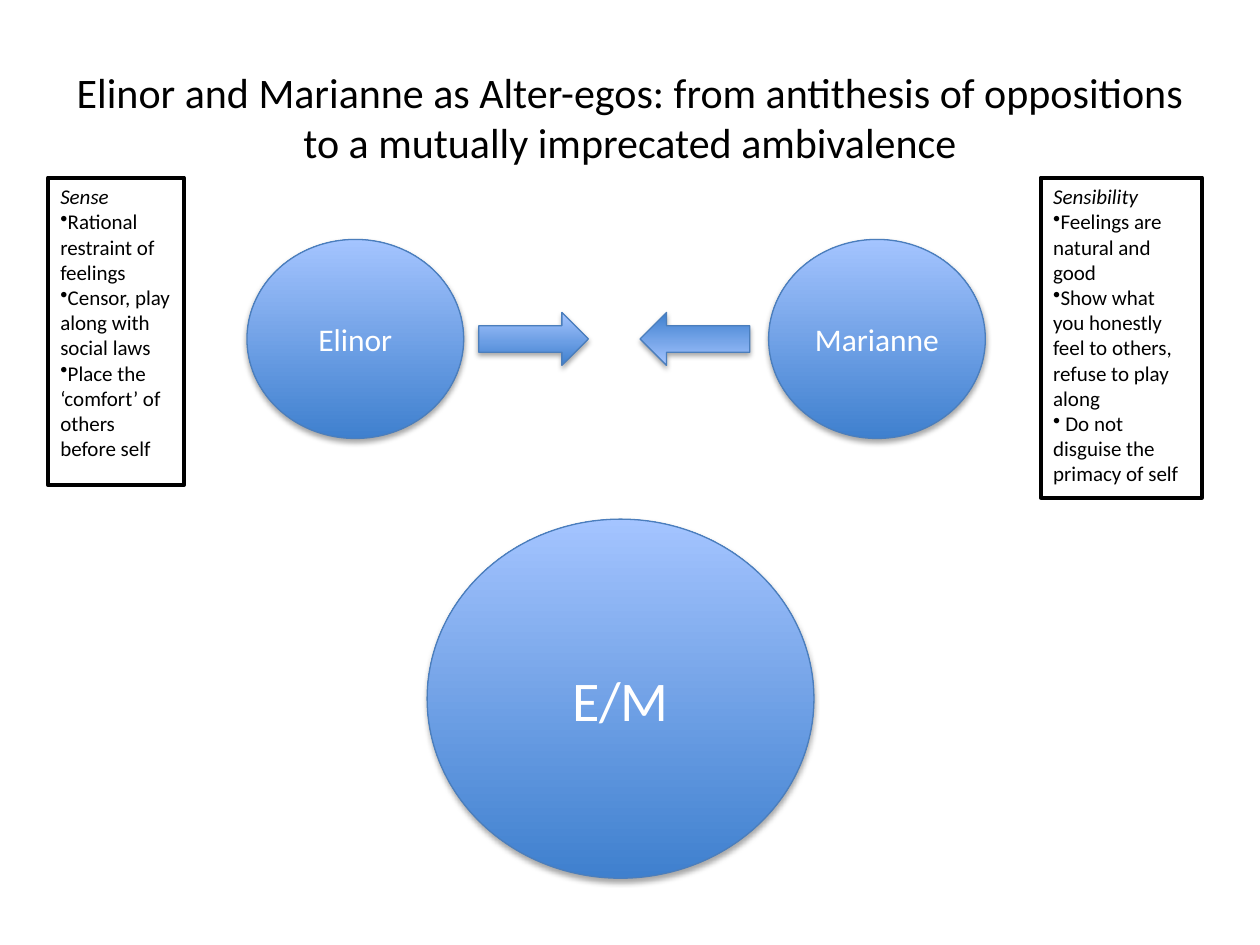
import pptx
import pptx.util
import pptx.dml.color
import pptx.enum.shapes
import pptx.enum.text
import pptx.oxml.ns
import lxml.etree

Inches = pptx.util.Inches
Pt = pptx.util.Pt
qn = pptx.oxml.ns.qn
Kind = pptx.enum.shapes.MSO_SHAPE
Align = pptx.enum.text.PP_ALIGN
Anchor = pptx.enum.text.MSO_ANCHOR
COLORS = {"ink": "000000", "white": "FFFFFF", "deep": "3F80CE",
          "pale": "A4C4FF", "edge": "4B7EBC"}


def color(name):
    return pptx.dml.color.RGBColor.from_string(COLORS[name])


def style(par, size, name, align=Align.CENTER):
    par.alignment = align
    par.font.name = "Calibri"
    par.font.size = Pt(size)
    par.font.color.rgb = color(name)


deck = pptx.Presentation()
deck.slide_width, deck.slide_height = Inches(10), Inches(7.5)
slide = deck.slides.add_slide(deck.slide_layouts[6])

# Title
title = slide.shapes.add_textbox(Inches(0.5), Inches(0.3), Inches(9), Inches(1.25))
frame = title.text_frame
frame.word_wrap = True
frame.vertical_anchor = Anchor.MIDDLE
frame.text = ("Elinor and Marianne as Alter-egos: from antithesis of oppositions "
              "to a mutually imprecated ambivalence")
style(frame.paragraphs[0], 24, "ink")

# Circles and the arrows that bring them together
figures = [
    (Kind.OVAL, 1.96, 1.9, 1.72, 1.58, 0, "Elinor", 18),
    (Kind.OVAL, 6.1, 1.9, 1.72, 1.58, 0, "Marianne", 18),
    (Kind.RIGHT_ARROW, 3.8, 2.48, 0.87, 0.42, 0, "", 18),
    (Kind.RIGHT_ARROW, 5.08, 2.48, 0.87, 0.42, 180, "", 18),
    (Kind.OVAL, 3.39, 4.12, 3.07, 2.85, 0, "E/M", 32),
]
for kind, x, y, w, h, turn, label, size in figures:
    shape = slide.shapes.add_shape(kind, Inches(x), Inches(y), Inches(w), Inches(h))
    shape.rotation = turn
    shape.fill.gradient()
    shape.fill.gradient_angle = 90
    for stop, name in zip(shape.fill.gradient_stops, ("deep", "pale")):
        stop.color.rgb = color(name)
    shape.line.color.rgb = color("edge")
    shape.line.width = Pt(0.75)

    # Soft shadow below
    shape.shadow.inherit = False
    effects = shape._element.spPr.find(qn("a:effectLst"))
    shade = lxml.etree.SubElement(
        effects, qn("a:outerShdw"), blurRad=str(Pt(3.1)), dist=str(Pt(1.8)),
        dir="5400000", rotWithShape="0")
    black = lxml.etree.SubElement(shade, qn("a:srgbClr"), val=COLORS["ink"])
    lxml.etree.SubElement(black, qn("a:alpha"), val="35000")

    if label:
        frame = shape.text_frame
        frame.vertical_anchor = Anchor.MIDDLE
        frame.text = label
        style(frame.paragraphs[0], size, "white")

# Framed lists of traits
lists = [
    (0.38, 1.08, 2.44, "Sense", [
        "Rational restraint of feelings",
        "Censor, play along with social laws",
        "Place the ‘comfort’ of others before self"]),
    (8.26, 1.28, 2.54, "Sensibility", [
        "Feelings are natural and good",
        "Show what you honestly feel to others, refuse to play along",
        " Do not disguise the primacy of self"]),
]
for x, w, h, head, traits in lists:
    box = slide.shapes.add_textbox(Inches(x), Inches(1.41), Inches(w), Inches(h))
    box.line.color.rgb = color("ink")
    box.line.width = Pt(2.25)
    frame = box.text_frame
    frame.word_wrap = True
    frame.text = "\n".join([head] + traits)
    for i, par in enumerate(frame.paragraphs):
        style(par, 12, "ink", Align.LEFT)
        par.font.italic = i == 0
        if i:
            props = par._p.get_or_add_pPr()
            bullet = lxml.etree.Element(qn("a:buChar"), char="•")
            props.insert(0, bullet)

deck.save("out.pptx")
